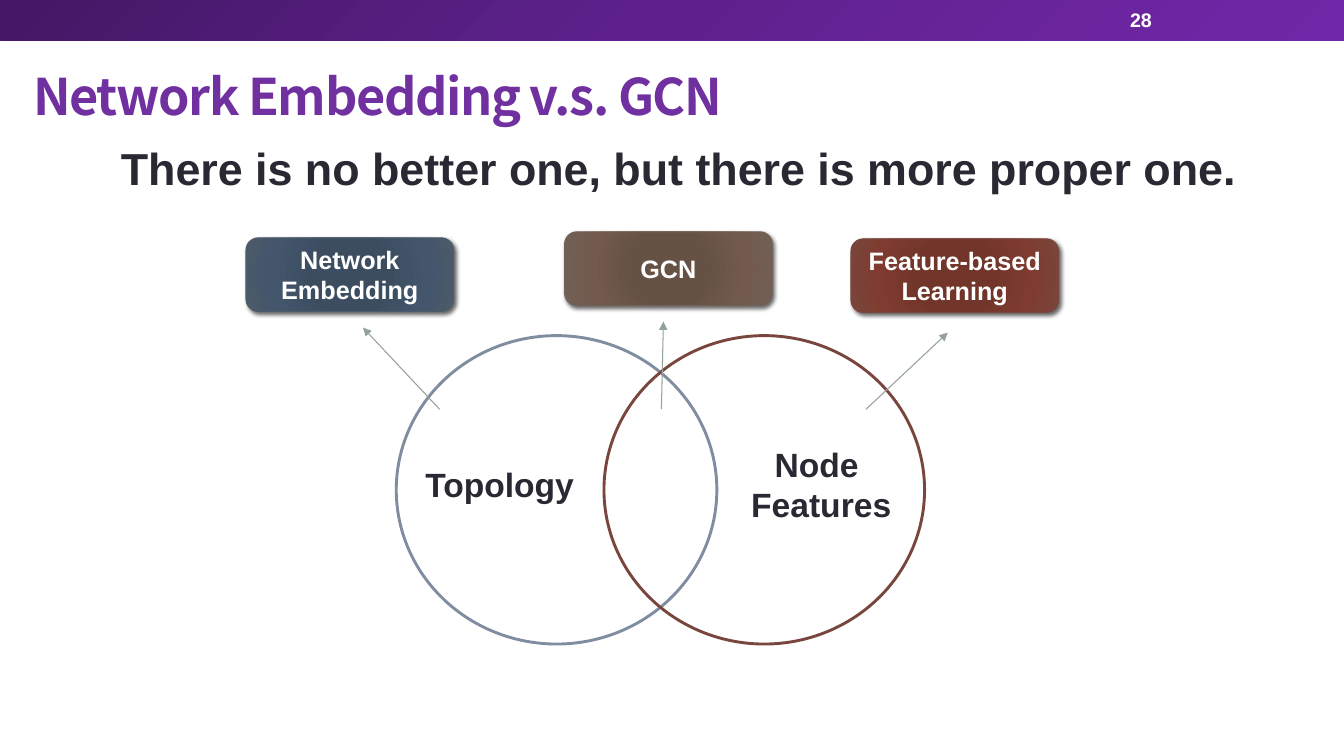
"""Build the slide comparing network embedding with GCN."""
import pptx
import pptx.util
import pptx.oxml
import pptx.oxml.ns
import pptx.dml.color
import pptx.enum.shapes
import pptx.enum.text
from pptx.util import Inches, Pt

RGBColor = pptx.dml.color.RGBColor
MSO_SHAPE = pptx.enum.shapes.MSO_SHAPE
ALIGN = pptx.enum.text.PP_ALIGN
ANCHOR = pptx.enum.text.MSO_ANCHOR

PURPLE = RGBColor(0x70, 0x30, 0xA0)
DARK = RGBColor(0x29, 0x29, 0x34)
WHITE = RGBColor(0xFF, 0xFF, 0xFF)
GREY = RGBColor(0x93, 0xA2, 0x99)
BLUE_RING = RGBColor(0x80, 0x8D, 0xA0)
RED_RING = RGBColor(0x79, 0x46, 0x3D)
BANNER_COLORS = [RGBColor.from_string(c) for c in ("431764", "5F218E", "7128A8")]
BLUE_SHADES = [RGBColor.from_string(c) for c in ("3B4D61", "3C4D60", "43566B", "4C5A6A")]
RED_SHADES = [RGBColor.from_string(c) for c in ("743327", "72352A", "7F3B2F", "79463D")]
BROWN_SHADES = [RGBColor.from_string(c) for c in ("685044", "665145", "725A4D", "726056")]

TITLE = "Network Embedding v.s. GCN"
LABELS = [
    ("28", (11.11, 0.02, 1.56, 0.36), 14, WHITE, ALIGN.LEFT, ANCHOR.MIDDLE, True),
    ("There is no better one, but there is more proper one.",
     (1.1, 1.35, 11.35, 0.64), 32, DARK, ALIGN.LEFT, ANCHOR.TOP, False),
    ("Topology", (4.12, 4.55, 1.69, 0.5), 24, DARK, ALIGN.LEFT, ANCHOR.TOP, False),
    ("Node \nFeatures", (7.34, 4.35, 1.61, 0.91), 24, DARK, ALIGN.CENTER, ANCHOR.TOP, False),
]
CIRCLES = [(3.93, BLUE_RING), (5.99, RED_RING)]
CIRCLE_TOP, CIRCLE_WIDTH, CIRCLE_HEIGHT = 3.33, 3.18, 3.06
METHODS = [
    ("Network Embedding", 2.44, 2.36, BLUE_SHADES, 4.36, (3.6, 3.25)),
    ("Feature-based Learning", 8.44, 2.37, RED_SHADES, 8.59, (9.4, 3.3)),
    ("GCN", 5.6, 2.3, BROWN_SHADES, 6.56, (6.58, 3.19)),
]
METHOD_WIDTH, METHOD_HEIGHT = 2.06, 0.73
ARROW_START = 4.06
BANNER_STOPS = (0, 50, 100)
METHOD_STOPS = (0, 34, 70, 100)
LINEAR = '<a:lin ang="2700000" scaled="0"/>'
RADIAL = '<a:path path="circle"><a:fillToRect l="100000" t="100000" r="100000" b="100000"/></a:path>'
SHADOW = ('<a:outerShdw {} blurRad="38100" dist="25400" dir="2700000" rotWithShape="0">'
          '<a:srgbClr val="000000"><a:alpha val="60000"/></a:srgbClr></a:outerShdw>')
NAMESPACE = pptx.oxml.ns.nsdecls("a")


def add_plain_shape(slide, kind, box):
    shape = slide.shapes.add_shape(kind, *map(Inches, box))
    shape.shadow.inherit = False
    shape.fill.background()
    shape.line.fill.background()
    return shape


def fill_gradient(shape, positions, colors, direction):
    stops = "".join(
        f'<a:gs pos="{position * 1000}"><a:srgbClr val="{color}"/></a:gs>'
        for position, color in zip(positions, colors))
    gradient = pptx.oxml.parse_xml(
        f'<a:gradFill {NAMESPACE} rotWithShape="1"><a:gsLst>{stops}</a:gsLst>{direction}</a:gradFill>')
    properties = shape.element.spPr
    properties.replace(properties.find(pptx.oxml.ns.qn("a:noFill")), gradient)


def write_text(shape, text, size, color, alignment, anchor, wrap=True, font="Arial"):
    frame = shape.text_frame
    frame.text = text
    frame.word_wrap = wrap
    frame.vertical_anchor = anchor
    for paragraph in frame.paragraphs:
        paragraph.alignment = alignment
        for run in paragraph.runs:
            run.font.name = font
            run.font.size = Pt(size)
            run.font.bold = True
            run.font.color.rgb = color


def add_title(slide):
    title = slide.shapes.title
    title.left, title.top, title.width, title.height = map(Inches, (0.23, 0.44, 12, 1.08))
    write_text(title, TITLE, 36, PURPLE, ALIGN.LEFT, ANCHOR.MIDDLE, font="Noto Sans CJK SC")
    title.text_frame.auto_size = pptx.enum.text.MSO_AUTO_SIZE.NONE
    paragraph = title.text_frame.paragraphs[0]
    paragraph.line_spacing = 0.9
    properties = paragraph.runs[0].font._element
    properties.set("spc", "-100")
    east_asian = pptx.oxml.parse_xml(f'<a:ea {NAMESPACE} typeface="Noto Sans CJK SC"/>')
    properties.find(pptx.oxml.ns.qn("a:latin")).addnext(east_asian)


def add_arrow(slide, start, end):
    arrow = slide.shapes.add_connector(
        pptx.enum.shapes.MSO_CONNECTOR.STRAIGHT, *map(Inches, start + end))
    arrow.line.color.rgb = GREY
    arrow.line.width = Pt(0.75)
    arrow.line._get_or_add_ln().append(
        pptx.oxml.parse_xml(f'<a:tailEnd {NAMESPACE} type="triangle"/>'))
    arrow.element.spPr.append(pptx.oxml.parse_xml(f"<a:effectLst {NAMESPACE}/>"))


def add_method(slide, text, left, top, shades):
    box = add_plain_shape(slide, MSO_SHAPE.ROUNDED_RECTANGLE,
                          (left, top, METHOD_WIDTH, METHOD_HEIGHT))
    fill_gradient(box, METHOD_STOPS, shades, RADIAL)
    box.line.color.rgb = shades[-1]
    box.line.width = Pt(0.75)
    effects = box.element.spPr.find(pptx.oxml.ns.qn("a:effectLst"))
    effects.append(pptx.oxml.parse_xml(SHADOW.format(NAMESPACE)))
    write_text(box, text, 18, WHITE, ALIGN.CENTER, ANCHOR.MIDDLE)


def main():
    presentation = pptx.Presentation()
    presentation.slide_width = Inches(13.33)
    presentation.slide_height = Inches(7.5)
    slide = presentation.slides.add_slide(presentation.slide_layouts[5])

    banner = add_plain_shape(slide, MSO_SHAPE.RECTANGLE, (0, 0, 13.33, 0.4))
    fill_gradient(banner, BANNER_STOPS, BANNER_COLORS, LINEAR)
    add_title(slide)
    for left, color in CIRCLES:
        circle = add_plain_shape(slide, MSO_SHAPE.OVAL,
                                 (left, CIRCLE_TOP, CIRCLE_WIDTH, CIRCLE_HEIGHT))
        circle.line.color.rgb = color
        circle.line.width = Pt(2.08)
    for text, box, *style in LABELS:
        write_text(slide.shapes.add_textbox(*map(Inches, box)), text, *style)
    for text, left, top, shades, arrow_left, arrow_end in METHODS:
        add_arrow(slide, (arrow_left, ARROW_START), arrow_end)
        add_method(slide, text, left, top, shades)
    presentation.save("out.pptx")


if __name__ == "__main__":
    main()
